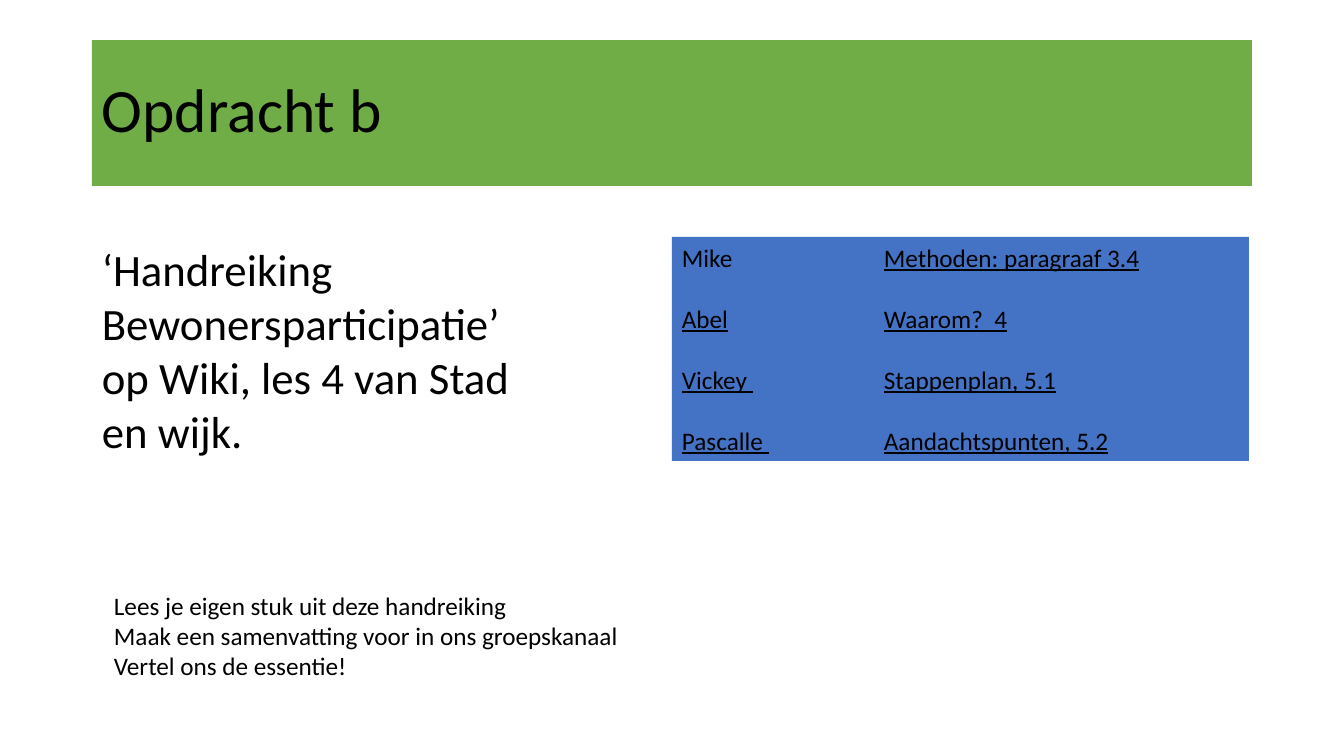
import pptx
import pptx.dml.color
import pptx.enum.shapes
import pptx.enum.text
import pptx.oxml.ns
import pptx.util
from lxml import etree

EMU_PER_PX = 914400 / 100.8
FONT = "Calibri"
BLACK, GREEN, BLUE = "000000", "70AD47", "4472C4"
TAB_STOP = 202

READINGS = [
    ("Mike", "Methoden: paragraaf 3.4"),
    ("Abel", "Waarom?  4"),
    ("Vickey ", "Stappenplan, 5.1"),
    ("Pascalle ", "Aandachtspunten, 5.2"),
]
STEPS = [
    "Lees je eigen stuk uit deze handreiking",
    "Maak een samenvatting voor in ons groepskanaal",
    "Vertel ons de essentie!",
]


def px(length):
    return pptx.util.Emu(round(length * EMU_PER_PX))


def color(hex_code):
    return pptx.dml.color.RGBColor.from_string(hex_code)


def add_text(paragraph, text, size=18, underline=False):
    run = paragraph.add_run()
    run.text = text
    run.font.name = FONT
    run.font.size = pptx.util.Pt(size)
    run.font.color.rgb = color(BLACK)
    run.font.underline = underline


def add_tab_stop(paragraph, position):
    properties = paragraph._p.get_or_add_pPr()
    stops = etree.SubElement(properties, pptx.oxml.ns.qn("a:tabLst"))
    etree.SubElement(stops, pptx.oxml.ns.qn("a:tab"), pos=str(px(position)), algn="l")


def next_paragraph(frame, index):
    paragraph = frame.add_paragraph() if index else frame.paragraphs[0]
    paragraph.alignment = pptx.enum.text.PP_ALIGN.LEFT
    return paragraph


def add_panel(slide, left, top, width, height, fill, anchor):
    panel = slide.shapes.add_shape(
        pptx.enum.shapes.MSO_SHAPE.RECTANGLE,
        px(left), px(top), px(width), px(height))
    panel.shadow.inherit = False
    panel.fill.solid()
    panel.fill.fore_color.rgb = color(fill)
    panel.line.fill.background()
    panel.text_frame.word_wrap = True
    panel.text_frame.vertical_anchor = anchor
    return panel.text_frame


def add_note(slide, left, top, width, height, lines, size):
    frame = slide.shapes.add_textbox(px(left), px(top), px(width), px(height)).text_frame
    frame.word_wrap = True
    for index, line in enumerate(lines):
        add_text(next_paragraph(frame, index), line, size=size)


def add_readings(slide):
    frame = add_panel(slide, 672, 237, 577, 224, BLUE, pptx.enum.text.MSO_ANCHOR.TOP)
    for index, (reader, section) in enumerate(READINGS):
        row = next_paragraph(frame, index)
        if index:
            row.space_before = pptx.util.Pt(22)
        add_tab_stop(row, TAB_STOP)
        add_text(row, reader, underline=index > 0)
        add_text(row, "\t")
        add_text(row, section, underline=True)


def main():
    deck = pptx.Presentation()
    deck.slide_width, deck.slide_height = px(1344), px(756)
    slide = deck.slides.add_slide(deck.slide_layouts[6])

    # Title bar
    title = add_panel(slide, 92, 40, 1160, 146, GREEN, pptx.enum.text.MSO_ANCHOR.MIDDLE)
    heading = next_paragraph(title, 0)
    heading.line_spacing = 0.9
    add_text(heading, "Opdracht b", size=44)

    # Who reads which section
    add_readings(slide)

    # Source of the reading and the assignment
    add_note(slide, 92, 237, 474, 228,
             ["‘Handreiking Bewonersparticipatie’ op Wiki, les 4 van Stad en wijk."], 32)
    add_note(slide, 104, 585, 1137, 102, STEPS, 18)

    deck.save("out.pptx")


if __name__ == "__main__":
    main()
